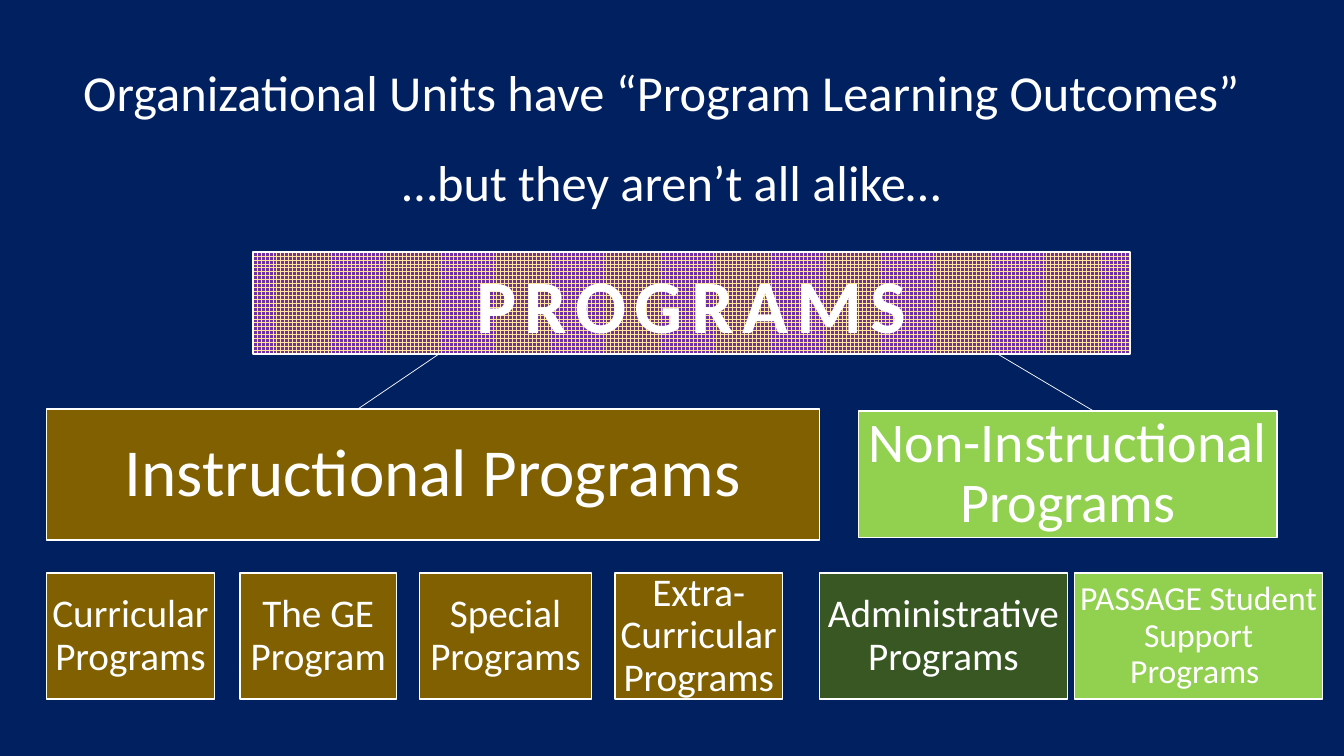
from dataclasses import dataclass

from pptx import Presentation
from pptx.dml.color import RGBColor
from pptx.enum.dml import MSO_PATTERN
from pptx.enum.shapes import MSO_CONNECTOR, MSO_SHAPE
from pptx.enum.text import MSO_ANCHOR, MSO_AUTO_SIZE, PP_ALIGN
from pptx.oxml.ns import qn
from pptx.slide import Slide
from pptx.text.text import TextFrame
from pptx.util import Cm, Pt
from lxml.etree import SubElement

HUES = {
    "navy": "002060",
    "white": "FFFFFF",
    "brown": "806000",
    "lime": "92D050",
    "green": "385723",
    "cream": "FFE699",
    "plum": "7030A0",
}
PAD = {f"margin_{side}": Cm(0.08) for side in ("left", "right", "top", "bottom")}
BOX_FRAME = {"word_wrap": True, "vertical_anchor": MSO_ANCHOR.MIDDLE, **PAD}
HEAD_FRAME = {"word_wrap": True, "auto_size": MSO_AUTO_SIZE.SHAPE_TO_FIT_TEXT}
ROW_TOP, ROW_HIGH = 14.44, 3.18


@dataclass
class Label:
    text: str
    left: float
    top: float
    width: float
    height: float
    size: int
    hue: str = ""
    bold: bool = False
    gap: int = 0  # letter spacing in points
    pitch: float = 0.9


@dataclass
class Link:
    x1: float
    y1: float
    x2: float
    y2: float


def unit(text: str, left: float, width: float, hue: str, size: int = 28) -> Label:
    return Label(text, left, ROW_TOP, width, ROW_HIGH, size, hue)


HEADS = [
    Label("Organizational Units have “Program Learning Outcomes”",
          1.17, 1.42, 31.01, 1.8, 36, pitch=1.0),
    Label("…but they aren’t all alike…", 0.33, 3.68, 33.2, 1.8, 36, pitch=1.0),
]
LINKS = [Link(28.17, 10.72, 24.92, 8.79), Link(8.94, 10.36, 11.18, 8.84)]
BOXES = [
    Label("PROGRAMS", 6.38, 6.35, 22.1, 2.57, 54, "grid", True, 6, 1.0),
    Label("Instructional Programs", 1.17, 10.31, 19.48, 3.3, 48, "brown"),
    Label("Non-Instructional Programs", 21.64, 10.36, 10.54, 3.18, 40, "lime"),
    unit("Curricular Programs", 1.17, 4.24, "brown"),
    unit("The GE Program", 6.05, 3.94, "brown"),
    unit("Special Programs", 10.57, 4.34, "brown"),
    unit("Extra-Curricular Programs", 15.5, 4.22, "brown"),
    unit("Administrative Programs", 20.65, 6.25, "green"),
    unit("PASSAGE Student Support Programs ", 27.08, 6.25, "lime", 24),
]


def color(hue: str) -> RGBColor:
    return RGBColor.from_string(HUES[hue])


def apply(target: object, looks: dict) -> None:
    for name, value in looks.items():
        setattr(target, name, value)


def write(frame: TextFrame, label: Label, looks: dict) -> None:
    apply(frame, looks)
    para = frame.paragraphs[0]
    apply(para, {"alignment": PP_ALIGN.CENTER, "line_spacing": label.pitch})
    run = para.add_run()
    run.text = label.text
    apply(run.font, {"name": "Calibri", "size": Pt(label.size), "bold": label.bold})
    run.font.color.rgb = color("white")
    if label.gap:
        run.font._element.set("spc", str(label.gap * 100))


def place(label: Label) -> list:
    return [Cm(n) for n in (label.left, label.top, label.width, label.height)]


def add_head(slide: Slide, label: Label) -> None:
    write(slide.shapes.add_textbox(*place(label)).text_frame, label, HEAD_FRAME)


def add_box(slide: Slide, label: Label) -> None:
    box = slide.shapes.add_shape(MSO_SHAPE.RECTANGLE, *place(label))
    box.shadow.inherit = False
    if label.hue == "grid":
        box.fill.patterned()
        box.fill.pattern = MSO_PATTERN.LARGE_GRID
        box.fill.fore_color.rgb = color("cream")
        box.fill.back_color.rgb = color("plum")
    else:
        box.fill.solid()
        box.fill.fore_color.rgb = color(label.hue)
    box.line.color.rgb = color("white")
    box.line.width = Pt(1)
    write(box.text_frame, label, BOX_FRAME)


def add_link(slide: Slide, link: Link) -> None:
    ends = [Cm(n) for n in (link.x1, link.y1, link.x2, link.y2)]
    line = slide.shapes.add_connector(MSO_CONNECTOR.STRAIGHT, *ends)
    line.line.color.rgb = color("white")
    line.line.width = Pt(0.5)
    SubElement(line._element.spPr, qn("a:effectLst"))


def main() -> None:
    deck = Presentation()
    apply(deck, {"slide_width": Cm(33.87), "slide_height": Cm(19.05)})
    slide = deck.slides.add_slide(deck.slide_layouts[6])
    slide.background.fill.solid()
    slide.background.fill.fore_color.rgb = color("navy")

    # Links lie behind the boxes
    for link in LINKS:
        add_link(slide, link)
    # Headings
    for head in HEADS:
        add_head(slide, head)
    # Program tree
    for box in BOXES:
        add_box(slide, box)

    deck.save("out.pptx")


if __name__ == "__main__":
    main()
